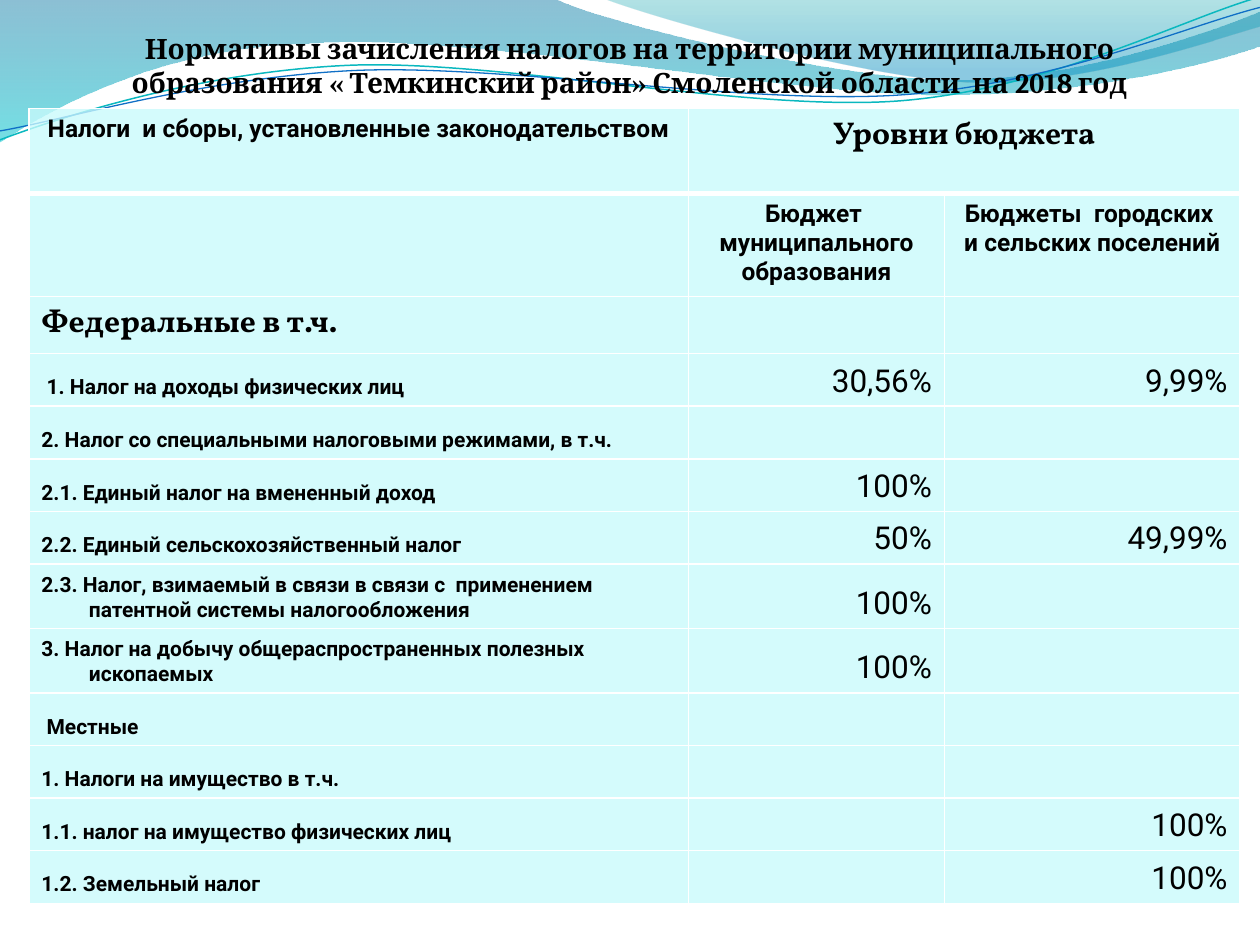
from lxml import etree
from pptx import Presentation
from pptx.dml.color import RGBColor
from pptx.enum.text import MSO_ANCHOR, PP_ALIGN
from pptx.oxml.ns import qn
from pptx.util import Cm, Pt

LEFT, CENTER, RIGHT = PP_ALIGN.LEFT, PP_ALIGN.CENTER, PP_ALIGN.RIGHT
BOTTOM = MSO_ANCHOR.BOTTOM

COLORS = {
    "text": "000000", "cell": "C9FAFC", "border": "FFFFFF",
    "deep blue": "0074A1", "cyan": "00C6CF", "teal": "00A1A9", "blue": "008BBF",
    "teal line": "0AB8BF", "blue line": "0F6FC6",
}

# Outlines in cm: a pair is a straight step, six numbers are a cubic curve.
# Gradient stops are (position, colour, opacity in percent).
WAVES = [
    ([(0, 0), (11.18, -0.03), (12.09, 0.43, 16.87, 1.6, 19.25, 1.6),
      (21.67, 1.6, 24.33, 0.66, 25.4, 0.23), (25.43, 0.91),
      (24.97, 1.12, 22.1, 1.93, 18.95, 1.91), (15.8, 1.91, 9.7, 0.71, 6.53, 0.86),
      (3.28, 0.91, 1.17, 2.11, -0.03, 2.87), (0, 0)],
     [(0, "deep blue", 45), (1, "cyan", 55)]),
    ([(12.17, -0.03), (12.93, 0.28, 17.32, 1.57, 19.53, 1.65),
      (21.74, 1.75, 24.41, 0.81, 25.4, 0.53), (25.4, 0), (12.17, -0.03)],
     [(0, "teal", 30), (0.8, "blue", 45)]),
]
WAVE_LINES = [
    ([(-0.05, 2.22), (1.19, 1.82, 4.02, 1.04, 7.05, 1.05),
      (10.05, 1.07, 15.02, 2.37, 18.08, 2.29), (21.13, 2.2, 23.87, 0.91, 25.41, 0.55)],
     "teal line", 0.85),
    ([(-0.04, 2.04), (1.16, 1.9, 4.18, 1.15, 7.2, 1.16),
      (10.25, 1.18, 15.13, 2.25, 18.18, 2.17), (21.21, 2.1, 23.93, 1.06, 25.45, 0.75)],
     "blue line", 0.75),
]
LINE_ROTATION = 357.3

TITLE = ("Нормативы зачисления налогов на территории муниципального образования "
         "« Темкинский район» Смоленской области  на 2018 год")
HEADINGS = [
    ["Налоги  и сборы, установленные законодательством", "Уровни бюджета", ""],
    ["", "Бюджет  муниципального образования", "Бюджеты  городских  и сельских поселений"],
    ["Федеральные в т.ч.", "", ""],
]
TAXES = [
    [" 1. Налог на доходы физических лиц", "30,56%", "9,99%"],
    ["2. Налог со специальными налоговыми режимами, в т.ч.", "", ""],
    ["2.1. Единый налог на вмененный доход", "100%", ""],
    ["2.2. Единый сельскохозяйственный налог", "50%", "49,99%"],
    ["2.3. Налог, взимаемый в связи в связи с  применением патентной системы "
     "налогообложения", "100%", ""],
    ["3. Налог на добычу общераспространенных полезных ископаемых", "100%", ""],
    [" Местные", "", ""],
    ["1. Налоги на имущество в т.ч.", "", ""],
    ["1.1. налог на имущество физических лиц", "", "100%"],
    ["1.2. Земельный налог", "", "100%"],
]
COLUMN_WIDTHS = [13.3, 5.16, 5.96]
HEADING_HEIGHTS = [1.71, 2.08, 1.15]
TAX_HEIGHT, TALL_TAX_HEIGHT = 1.06, 1.3
TALL_TAXES = (4, 5)


def rgb(name):
    return RGBColor.from_string(COLORS[name])


def set_alpha(color_element, percent):
    etree.SubElement(color_element, qn("a:alpha"), val=str(percent * 1000))


def add_outline(page, left, top, steps, close):
    """Draw the steps as a freeform, joining each curve's three points."""
    points = [(Cm(left + x), Cm(top + y))
              for step in steps for x, y in zip(step[::2], step[1::2])]
    builder = page.shapes.build_freeform(*points[0])
    builder.add_line_segments(points[1:], close=close)
    shape = builder.convert_to_shape()
    shape.shadow.inherit = False
    segments = iter(list(shape._element.iter(qn("a:lnTo"))))
    for step in steps[1:]:
        segment = next(segments)
        if len(step) == 6:
            segment.addprevious(curve := etree.Element(qn("a:cubicBezTo")))
            for part in (segment, next(segments), next(segments)):
                curve.append(part[0])
                part.getparent().remove(part)
    return shape


def add_waves(page, left, top):
    for steps, stops in WAVES:
        wave = add_outline(page, left, top, steps, True)
        wave.line.fill.background()
        wave.fill.gradient()
        wave.fill.gradient_angle = 270
        for stop, (position, color, _) in zip(wave.fill.gradient_stops, stops):
            stop.position = position
            stop.color.rgb = rgb(color)
        elements = list(wave._element.spPr.iter(qn("a:srgbClr")))
        for element, (_, _, opacity) in zip(elements, stops):
            set_alpha(element, opacity)
    for steps, color, width in WAVE_LINES:
        line = add_outline(page, left, top, steps, False)
        line.rotation = LINE_ROTATION
        line.fill.background()
        line.line.color.rgb = rgb(color)
        line.line.width = Pt(width)


def add_span(para, text, font, size, bold=True):
    span = para.add_run()
    span.text = text
    span.font.name = font
    span.font.size = Pt(size)
    span.font.bold = bold
    span.font.color.rgb = rgb("text")


def add_title(page, left, top, width, height):
    box = page.shapes.add_textbox(Cm(left), Cm(top), Cm(width), Cm(height))
    frame = box.text_frame
    frame.word_wrap = True
    frame.vertical_anchor = BOTTOM
    frame.margin_left = frame.margin_right = frame.margin_bottom = 0
    para = frame.paragraphs[0]
    para.alignment = CENTER
    add_span(para, TITLE, "Cambria", 16)


def style_cell(cell, row):
    """Give a cell its borders and its translucent fill."""
    properties = cell._tc.get_or_add_tcPr()
    widths = {"L": 1, "R": 1, "T": 3 if row == 1 else 1, "B": 3 if row == 0 else 1}
    for side, width in widths.items():
        border = etree.SubElement(properties, qn("a:ln" + side), w=str(Pt(width)))
        fill = etree.SubElement(border, qn("a:solidFill"))
        etree.SubElement(fill, qn("a:srgbClr"), val=COLORS["border"])
    cell.fill.solid()
    cell.fill.fore_color.rgb = rgb("cell")
    set_alpha(properties.find(qn("a:solidFill")).find(qn("a:srgbClr")), 78)


def fill_heading(cell, text, row):
    para = cell.text_frame.paragraphs[0]
    para.alignment = LEFT if row == 2 else CENTER
    large = text in ("Уровни бюджета", "Федеральные в т.ч.")
    add_span(para, text, "Vollkorn" if large else "Roboto", 18 if large else 14)


def fill_tax(cell, text, column):
    cell.vertical_anchor = BOTTOM
    para = cell.text_frame.paragraphs[0]
    para.alignment = RIGHT if column else LEFT
    indent = para._p.get_or_add_pPr()
    indent.set("marL", str(Cm(0.96)))
    indent.set("indent", str(-Cm(0.96)))
    add_span(para, text, "Roboto", 18 if column else 12, bold=column == 0)


def add_tax_table(page, left, top):
    rows = HEADINGS + TAXES
    heights = HEADING_HEIGHTS + [
        TALL_TAX_HEIGHT if index in TALL_TAXES else TAX_HEIGHT
        for index in range(len(TAXES))]
    table = page.shapes.add_table(
        len(rows), len(COLUMN_WIDTHS), Cm(left), Cm(top),
        Cm(sum(COLUMN_WIDTHS)), Cm(sum(heights))).table
    table.first_row = table.horz_banding = False
    for column, width in zip(table.columns, COLUMN_WIDTHS):
        column.width = Cm(width)
    for row, (texts, height) in enumerate(zip(rows, heights)):
        table.rows[row].height = Cm(height)
        for column, text in enumerate(texts):
            cell = table.cell(row, column)
            style_cell(cell, row)
            if text and row < len(HEADINGS):
                fill_heading(cell, text, row)
            elif text:
                fill_tax(cell, text, column)
    table.cell(0, 1).merge(table.cell(0, 2))


def main():
    deck = Presentation()
    deck.slide_width, deck.slide_height = Cm(25.4), Cm(19.05)
    page = deck.slides.add_slide(deck.slide_layouts[6])
    add_waves(page, 0, 0)
    add_title(page, 1.27, 0.39, 22.86, 1.6)
    add_tax_table(page, 0.58, 2.19)
    deck.save("out.pptx")


if __name__ == "__main__":
    main()
